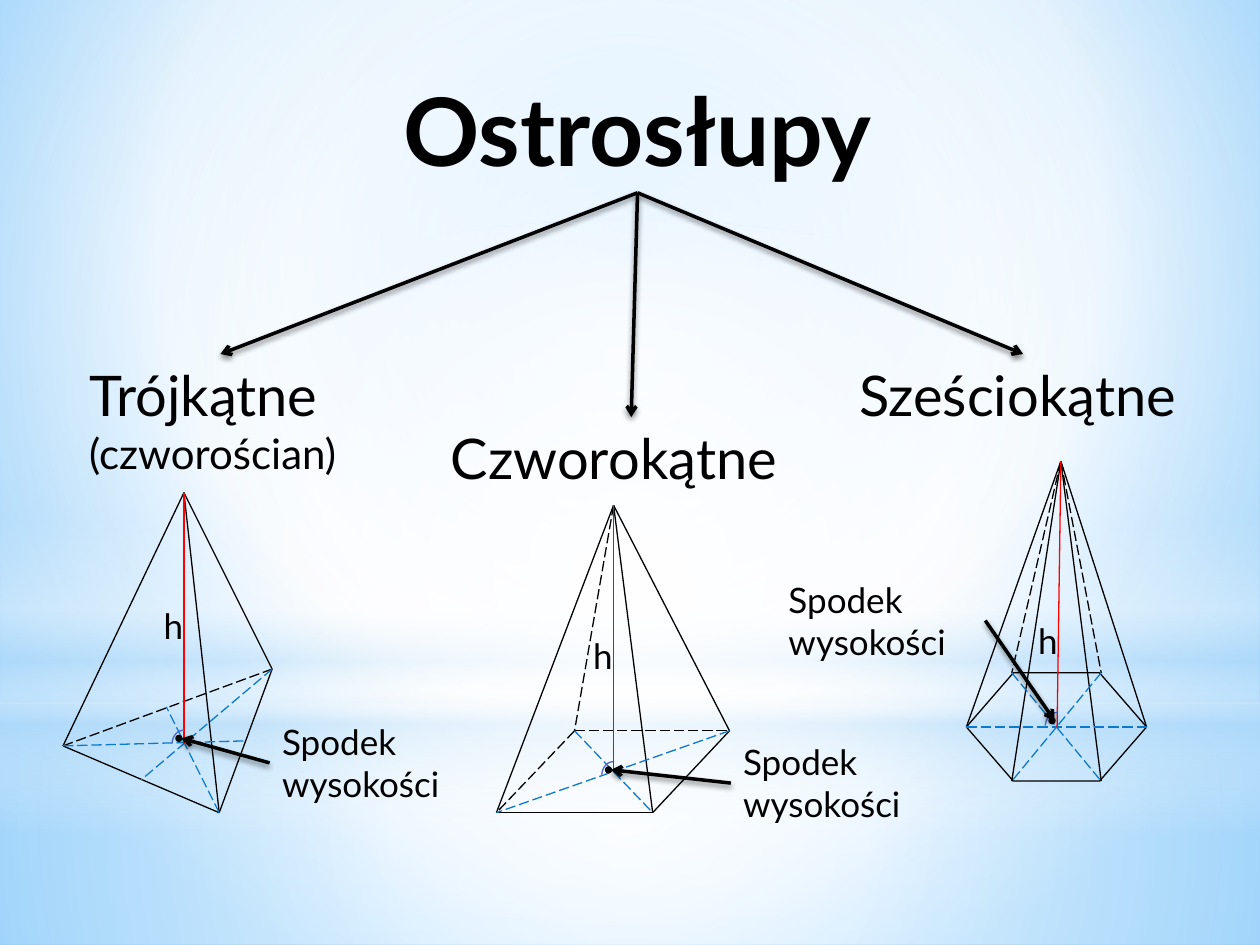
from lxml import etree
from pptx import Presentation
from pptx.dml.color import RGBColor
from pptx.enum.dml import MSO_LINE
from pptx.enum.shapes import MSO_CONNECTOR, MSO_SHAPE
from pptx.enum.text import MSO_ANCHOR, MSO_AUTO_SIZE, PP_ALIGN
from pptx.oxml import parse_xml
from pptx.oxml.ns import nsdecls, qn
from pptx.util import Inches, Pt

LINE = MSO_CONNECTOR.STRAIGHT
DASH = MSO_LINE.LONG_DASH
RECT, OVAL, ARC, HEX = (MSO_SHAPE.RECTANGLE, MSO_SHAPE.OVAL,
                        MSO_SHAPE.ARC, MSO_SHAPE.HEXAGON)
GROW = MSO_AUTO_SIZE.SHAPE_TO_FIT_TEXT
CENTER, LEFT = PP_ALIGN.CENTER, PP_ALIGN.LEFT
TOP = MSO_ANCHOR.TOP

HUES = {"ink": "000000", "blue": "0D79CA", "red": "FF0000", "arc": "4E67C8",
        "white": "FFFFFF", "pale": "B4DCFA", "sky": "9ED5FF", "deep": "5BB9FF"}
PENS = {"edge": ("ink", None), "back": ("ink", DASH),
        "base": ("blue", DASH), "rise": ("red", None)}
MID = (50, 50, 50, 50)
VEILS = [
    (RECT, (0, 5.58, 10, 1.92), MID,
     [(0, "white", 91), (37, "white", 76), (100, "pale", 79)]),
    (RECT, (0, 0, 10, 5.58), MID,
     [(0, "white", 89), (48, "white", 62), (100, "pale", 79)]),
    (RECT, (0, 4.12, 10, 2.5), None,
     [(0, "white", 0), (29, "white", 30), (45, "pale", 40),
      (55, "white", 26), (65, "pale", 60), (100, "white", 0)]),
    (OVAL, (0, 1.75, 10, 5.58), MID, [(0, "white", 100), (56, "white", 0)]),
]
KINDS = [
    ((0.61, 2.81, 2.28, 1.04), [("Trójkątne", 32), ("(czworościan)", 24)]),
    ((3.48, 3.31, 3.06, 0.64), [("Czworokątne", 32)]),
    ((6.72, 2.81, 2.8, 0.64), [("Sześciokątne", 32)]),
]
SOLIDS = [
    {"at": (0.5, 3.91), "dot": (0.9, 1.93), "h": (0.7, 0.84),
     "note": (1.64, 1.76), "side": 1,
     "pts": {"S": (0.96, 0), "O": (0.96, 1.99), "A": (0, 2.01),
             "B": (1.24, 2.54), "C": (1.66, 1.4), "K": (1.45, 1.97),
             "L": (0.62, 2.28), "M": (0.82, 1.7)},
     "edge": "CB BA AS CS BS", "back": "AC", "base": "AK CL BM", "rise": "OS"},
    {"at": (3.94, 4.01), "dot": (0.87, 2.08), "h": (0.67, 0.98),
     "note": (1.86, 1.82), "side": 1,
     "pts": {"S": (0.93, 0), "O": (0.93, 2.11), "A": (0, 2.44),
             "B": (1.24, 2.44), "C": (1.85, 1.79), "D": (0.62, 1.79)},
     "edge": "BC BA SA SC SB", "back": "DA DC SD", "base": "DB CA",
     "rise": "OS"},
    {"at": (7.67, 3.66), "dot": (0.66, 2.04), "h": (0.47, 1.21),
     "note": (-1.51, 0.88), "side": 3, "hex": (0, 1.68, 1.43, 0.86),
     "pts": {"S": (0.75, 0), "O": (0.72, 2.11), "A": (0, 2.11),
             "B": (0.36, 2.54), "C": (1.07, 2.54), "D": (1.43, 2.11),
             "E": (1.07, 1.68), "F": (0.36, 1.68)},
     "edge": "SA SB SC SD", "back": "SE SF", "base": "FC EB AD",
     "rise": "OS"},
]


def hue(name):
    return RGBColor.from_string(HUES[name])


def dress(item, vals):
    for key, val in vals.items():
        setattr(item, key, val)


def shift(at, by):
    return at[0] + by[0], at[1] + by[1]


def blend(node, stops, focus):
    marks = "".join(
        f'<a:gs pos="{pos * 1000}"><a:srgbClr val="{HUES[name]}">'
        f'<a:alpha val="{clear * 1000}"/></a:srgbClr></a:gs>'
        for pos, name, clear in stops)
    way = '<a:lin ang="5400000" scaled="0"/>'
    if focus:
        rim = " ".join(f'{k}="{v * 1000}"' for k, v in zip("ltrb", focus))
        way = f'<a:path path="circle"><a:fillToRect {rim}/></a:path>'
    node.replace(node.find(qn("a:noFill")), parse_xml(
        f'<a:gradFill {nsdecls("a")} rotWithShape="1">'
        f'<a:gsLst>{marks}</a:gsLst>{way}</a:gradFill>'))


def form(shapes, kind, box, pen=None, width=0.75):
    item = shapes.add_shape(kind, *map(Inches, box))
    item.shadow.inherit = False
    item.fill.background()
    if pen:
        item.line.color.rgb = hue(pen)
        item.line.width = Pt(width)
    else:
        item.line.fill.background()
    return item


def write(item, rows, wrap=True, bold=False, align=LEFT):
    frame = item.text_frame
    dress(frame, {"word_wrap": wrap, "auto_size": GROW,
                  "vertical_anchor": TOP})
    for num, (text, size) in enumerate(rows):
        para = frame.add_paragraph() if num else frame.paragraphs[0]
        para.alignment = align
        run = para.add_run()
        run.text = text
        dress(run.font, {"name": "Lato", "size": Pt(size), "bold": bold})
        run.font.color.rgb = hue("ink")


def label(shapes, box, rows):
    item = shapes.add_textbox(*map(Inches, box))
    write(item, rows)
    return item


def rule(shapes, start, end, pen="ink", width=0.75, dash=None):
    item = shapes.add_connector(LINE, *map(Inches, (*start, *end)))
    item.line.color.rgb = hue(pen)
    dress(item.line, {"width": Pt(width), "dash_style": dash})
    etree.SubElement(item._element.spPr, qn("a:effectLst"))
    return item


def arrow(shapes, start, end):
    item = rule(shapes, start, end, width=2)
    tail = etree.SubElement(item.line._get_or_add_ln(), qn("a:tailEnd"))
    tail.set("type", "arrow")
    item._element.spPr.find(qn("a:effectLst")).append(parse_xml(
        f'<a:outerShdw {nsdecls("a")} blurRad="40000" dist="23000" '
        'dir="5400000" rotWithShape="0"><a:srgbClr val="000000">'
        '<a:alpha val="45000"/></a:srgbClr></a:outerShdw>'))
    return item


def backdrop(slide):
    slide.background.fill.background()
    blend(slide.element.find(".//" + qn("p:bgPr")),
          [(0, "sky", 100), (60, "white", 100), (100, "deep", 100)],
          (20, 10, 20, 60))
    for kind, box, focus, stops in VEILS:
        veil = form(slide.shapes, kind, box)
        blend(veil._element.spPr, stops, focus)


def heading(slide, box):
    title = slide.shapes.title
    dress(title, dict(zip(("left", "top", "width", "height"),
                          map(Inches, box))))
    write(title, [("Ostrosłupy", 54)], wrap=False, bold=True, align=CENTER)
    slide.shapes._spTree.append(title._element)
    return title


def branch(slide, title, box, rows):
    name = label(slide.shapes, box, rows)
    link = arrow(slide.shapes, (0, 0), (1, 1))
    link.begin_connect(title, 2)
    link.end_connect(name, 0)


def pyramid(slide, solid):
    shapes = slide.shapes.add_group_shape().shapes
    at = solid["at"]
    pts = {key: shift(at, pt) for key, pt in solid["pts"].items()}
    if "hex" in solid:
        x, y, wide, high = solid["hex"]
        base = form(shapes, HEX, (*shift(at, (x, y)), wide, high), "ink")
        base.adjustments[0] = 0.434
    for kind, (pen, dash) in PENS.items():
        for start, end in solid[kind].split():
            rule(shapes, pts[start], pts[end], pen, dash=dash)
    dot = shift(at, solid["dot"])
    form(shapes, ARC, (*shift(dot, (-0.06, -0.02)), 0.22, 0.17),
         "arc").rotation = 274.8
    spot = form(shapes, OVAL, (*dot, 0.04, 0.04), "ink", 1.25)
    spot.fill.solid()
    spot.fill.fore_color.rgb = hue("ink")
    note = label(shapes, (*shift(at, solid["note"]), 1.66, 0.77),
                 [("Spodek wysokości", 20)])
    link = arrow(shapes, dot, shift(dot, (0.04, 0.02)))
    link.begin_connect(note, solid["side"])
    label(shapes, (*shift(at, solid["h"]), 0.48, 0.44), [("h", 20)])


def main():
    deck = Presentation()
    dress(deck, {"slide_width": Inches(10), "slide_height": Inches(7.5)})
    slide = deck.slides.add_slide(deck.slide_layouts[5])
    backdrop(slide)
    title = heading(slide, (3.08, 0.52, 3.96, 1.01))
    for box, rows in KINDS:
        branch(slide, title, box, rows)
    for solid in SOLIDS:
        pyramid(slide, solid)
    deck.save("out.pptx")


if __name__ == "__main__":
    main()
